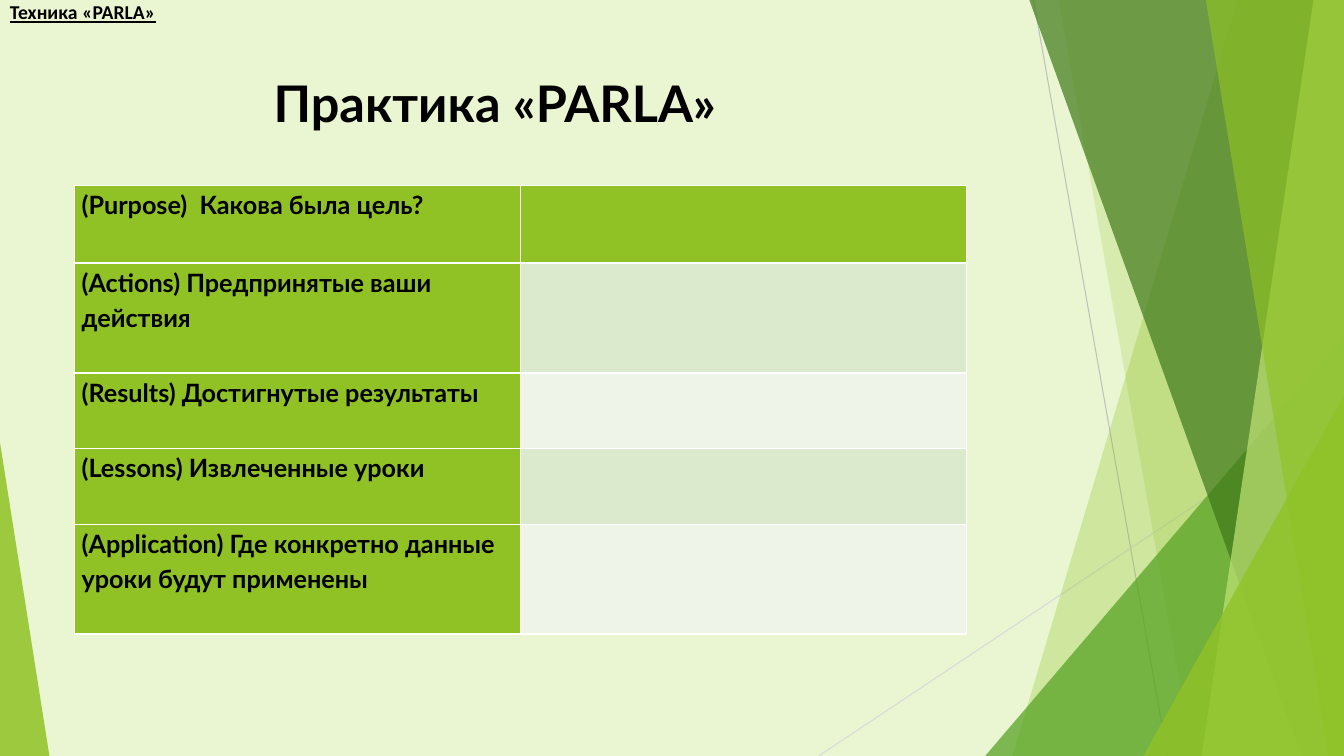
from dataclasses import dataclass

from lxml.etree import SubElement
from pptx import Presentation
from pptx.dml.color import RGBColor
from pptx.enum.shapes import MSO_CONNECTOR as Connector, MSO_SHAPE as Shape
from pptx.enum.text import MSO_ANCHOR as Anchor, PP_ALIGN as Align
from pptx.oxml.ns import qn
from pptx.util import Inches, Pt


@dataclass(frozen=True)
class Theme:
    background: str = "EAF6D1"
    green: str = "90C226"
    leaf: str = "54A021"
    forest: str = "3F7819"
    lime: str = "C0E474"
    dark_line: str = "BFBFBF"
    light_line: str = "D9D9D9"
    band: str = "DBE9CD"
    pale_band: str = "EEF4E8"
    text: str = "000000"
    title_font: str = "Lato"
    label_font: str = "Calibri"
    title_size: int = 36
    table_size: int = 18
    label_size: int = 14


@dataclass(frozen=True)
class Box:
    """A region in inches; x and y turn percentages of it into lengths."""
    left: float
    top: float
    width: float
    height: float

    def x(self, percent):
        return Inches(self.left + self.width * percent / 100)

    def y(self, percent):
        return Inches(self.top + self.height * percent / 100)

    def frame(self):
        return [Inches(n) for n in (self.left, self.top, self.width, self.height)]


THEME = Theme()
WIDTH, HEIGHT = 13.33, 7.5
FACETS = Box(8.12, 0, 5.21, HEIGHT)
LEFT_EDGE = Box(0, 4.39, 0.49, 3.11)
TITLE = Box(0.74, 0.67, 9.4, 1.44)
TABLE = Box(0.74, 1.84, 8.85, 4.45)
LABEL = Box(0, 0, WIDTH, 0.25)

QUESTIONS = [
    ("(Purpose)  Какова была цель?", 0.77),
    ("(Actions) Предпринятые ваши действия", 1.09),
    ("(Results) Достигнутые результаты", 0.75),
    ("(Lessons) Извлеченные уроки", 0.75),
    ("(Application) Где конкретно данные уроки будут применены", 1.09),
]


def write(text_frame, text, *, size, font=THEME.title_font, underline=False,
          spacing=1.0, align=Align.LEFT):
    para = text_frame.paragraphs[0]
    para.alignment = align
    para.line_spacing = spacing
    span = para.add_run()
    span.text = text
    span.font.name = font
    span.font.size = Pt(size)
    span.font.bold = True
    span.font.underline = underline
    span.font.color.rgb = RGBColor.from_string(THEME.text)


def paint(shape, color, opacity):
    shape.shadow.inherit = False
    shape.line.fill.background()
    shape.fill.solid()
    shape.fill.fore_color.rgb = RGBColor.from_string(color)
    color_node = shape.fill._xPr.find(qn("a:solidFill"))[0]
    SubElement(color_node, qn("a:alpha"), val=str(opacity * 1000))


def add_line(page, start, end, color):
    line = page.shapes.add_connector(Connector.STRAIGHT, *start, *end)
    line.line.color.rgb = RGBColor.from_string(color)
    line.line.width = Pt(0.75)
    SubElement(line._element.spPr, qn("a:effectLst"))


def add_triangle(page, box, apex, color, opacity):
    triangle = page.shapes.add_shape(Shape.ISOSCELES_TRIANGLE, *box.frame())
    triangle.adjustments[0] = apex
    paint(triangle, color, opacity)


def add_facets(page, box):
    def facet(top, bottom, color, opacity):
        """A full-height pane from a slanted left side to the right edge."""
        outline = page.shapes.build_freeform(box.x(top), box.y(0))
        outline.add_line_segments([(box.x(100), box.y(0)), (box.x(100), box.y(100)),
                                   (box.x(bottom), box.y(100))])
        paint(outline.convert_to_shape(), color, opacity)

    def corner(left, top, color, opacity):
        """A right-angled triangle in the lower right corner."""
        width = box.width * (100 - left) / 100
        height = box.height * (100 - top) / 100
        region = Box(box.left + box.width - width, box.top + box.height - height,
                     width, height)
        add_triangle(page, region, 1, color, opacity)

    add_line(page, (box.x(40.9), box.y(0)), (box.x(66.4), box.y(100)), THEME.dark_line)
    add_line(page, (box.x(100), box.y(53.7)), (box.x(0), box.y(100)), THEME.light_line)
    facet(79.8, 36.9, THEME.green, 30)
    facet(45.7, 71.2, THEME.green, 20)
    corner(31.7, 44.4, THEME.leaf, 72)
    facet(40.1, 91.9, THEME.forest, 70)
    facet(94.2, 72.9, THEME.lime, 70)
    facet(73.7, 97.1, THEME.green, 65)
    corner(61.8, 52.4, THEME.green, 80)


def add_title(page, box):
    title = page.shapes.title
    title.left, title.top, title.width, title.height = box.frame()
    frame = title.text_frame
    frame.word_wrap = True
    frame.vertical_anchor = Anchor.TOP
    frame.margin_left = Inches(box.width * 0.21)
    write(frame, "Практика «PARLA»", size=THEME.title_size)


def add_questions(page, box):
    table = page.shapes.add_table(len(QUESTIONS), 2, *box.frame()).table
    for column in table.columns:
        column.width = Inches(box.width / 2)
    for index, (question, height) in enumerate(QUESTIONS):
        table.rows[index].height = Inches(height)
        band = THEME.band if index % 2 else THEME.pale_band
        answer_fill = band if index else THEME.green
        for column, color in enumerate((THEME.green, answer_fill)):
            cell = table.cell(index, column)
            cell.fill.solid()
            cell.fill.fore_color.rgb = RGBColor.from_string(color)
            cell.margin_left = cell.margin_right = Inches(0.07)
            cell.margin_top = cell.margin_bottom = 0
        write(table.cell(index, 0).text_frame, question,
              size=THEME.table_size, spacing=1.15)


def add_label(page, box):
    frame = page.shapes.add_textbox(*box.frame()).text_frame
    frame.word_wrap = True
    frame.margin_top = frame.margin_bottom = 0
    write(frame, "Техника «PARLA»", size=THEME.label_size,
          font=THEME.label_font, underline=True)


def main():
    deck = Presentation()
    deck.slide_width, deck.slide_height = Inches(WIDTH), Inches(HEIGHT)
    page = deck.slides.add_slide(deck.slide_layouts.get_by_name("Title Only"))
    page.background.fill.solid()
    page.background.fill.fore_color.rgb = RGBColor.from_string(THEME.background)
    add_facets(page, FACETS)
    add_triangle(page, LEFT_EDGE, 0, THEME.green, 85)
    add_title(page, TITLE)
    add_questions(page, TABLE)
    add_label(page, LABEL)
    deck.save("out.pptx")


if __name__ == "__main__":
    main()
